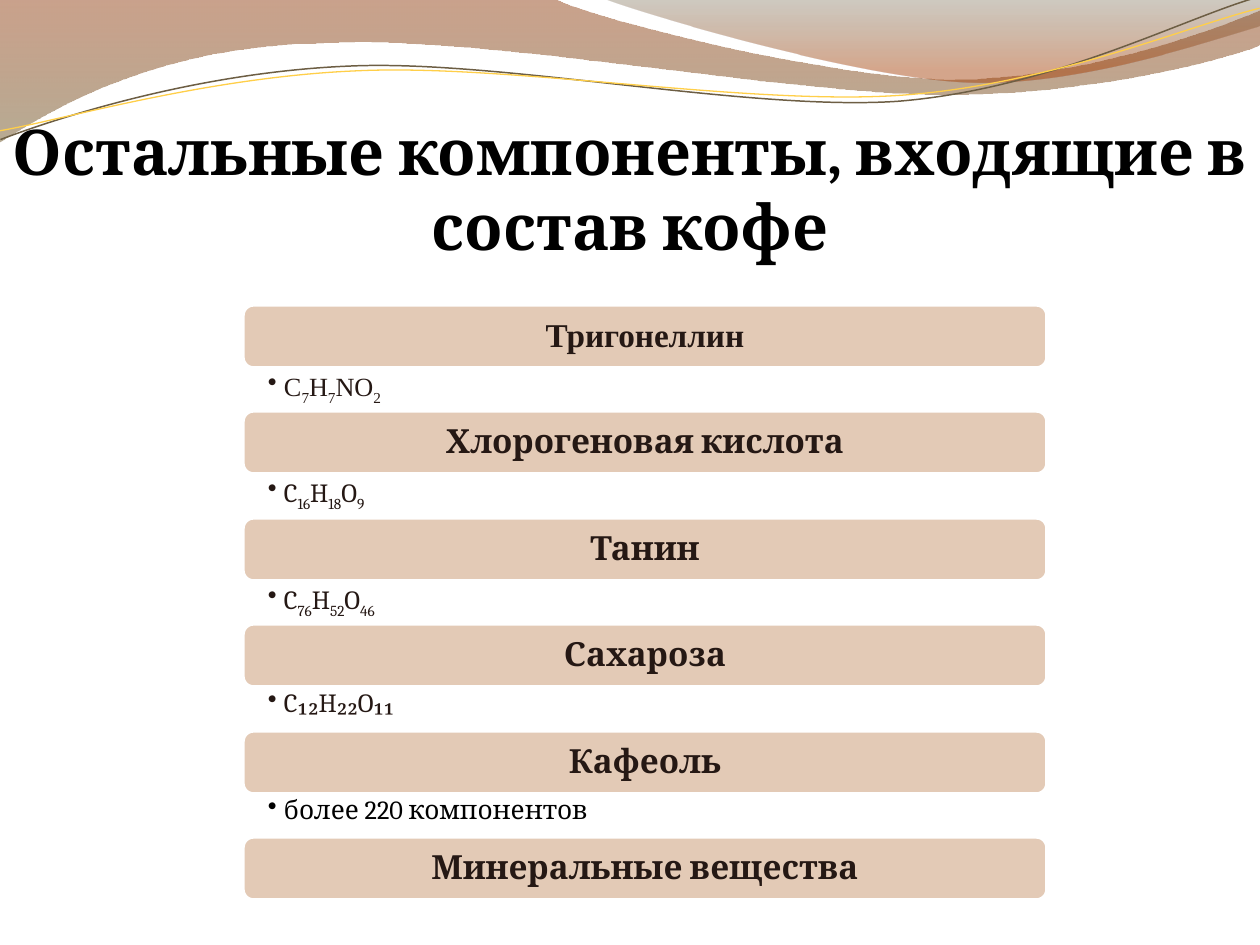
import itertools

import lxml.etree
import pptx
import pptx.dml.color
import pptx.enum.shapes
import pptx.enum.text
import pptx.oxml
import pptx.oxml.ns
import pptx.util

RGB = pptx.dml.color.RGBColor
ALIGN = pptx.enum.text.PP_ALIGN
ANCHOR = pptx.enum.text.MSO_ANCHOR
BLACK = RGB(0x00, 0x00, 0x00)
WHITE = RGB(0xFF, 0xFF, 0xFF)
DARK = RGB(0x25, 0x18, 0x14)
SAND = RGB(0xE3, 0xCA, 0xB6)
RUST = RGB(0x8A, 0x31, 0x00)
OLIVE = RGB(0x7B, 0x65, 0x3A)
UMBER = RGB(0x60, 0x51, 0x34)
COPPER = RGB(0xA4, 0x3B, 0x00)
BROWN = RGB(0x6D, 0x5E, 0x44)
GOLD = RGB(0xFF, 0xCF, 0x49)

SCALE = 914400 / 126
TILT = 357.3
SERIF = "Cambria"
TIMES = "Times New Roman"

BAND = [(0, 0), (554, -1), (600, 21, 837, 79, 955, 79),
        (1075, 79, 1207, 33, 1260, 11), (1261, 45),
        (1239, 55, 1096, 96, 940, 94), (784, 94, 481, 35, 324, 43),
        (163, 45, 58, 105, -1, 142)]
WEDGE = [(604, -1), (641, 14, 859, 78, 969, 82),
         (1079, 86, 1211, 40, 1260, 26), (1260, 0)]
WAVES = [
    ([(-2, 110), (59, 90, 200, 52, 350, 53), (499, 53, 745, 117, 896, 114),
      (1049, 109, 1184, 45, 1260, 27)], BROWN, 0.85),
    ([(-2, 101), (57, 94, 207, 57, 358, 58), (509, 58, 750, 112, 902, 108),
      (1052, 104, 1190, 52, 1262, 38)], GOLD, 0.75),
]
PARTS = [
    ("Тригонеллин", "C7H7NO2", dict(font=TIMES, sub=True)),
    ("Хлорогеновая кислота", "C16H18O9", dict(sub=True)),
    ("Танин", "C76H52O46", dict(sub=True)),
    ("Сахароза", "C₁₂H₂₂O₁₁", {}),
    ("Кафеоль", "более 220 компонентов", dict(color=BLACK)),
    ("Минеральные вещества", None, {}),
]


def px(num):
    """Turn pixels into EMU."""
    return pptx.util.Emu(round(num * SCALE))


def outline(slide, path, close):
    """Add a freeform of straight and cubic segments."""
    pts = [(px(x), px(y)) for seg in path for x, y in zip(seg[::2], seg[1::2])]
    build = slide.shapes.build_freeform(*pts[0], scale=1.0)
    build.add_line_segments(pts[1:], close=close)
    shape = build.convert_to_shape()
    shape.shadow.inherit = False
    lines = iter(shape._element.findall(".//" + pptx.oxml.ns.qn("a:lnTo")))
    for seg in path[1:]:
        group = list(itertools.islice(lines, len(seg) // 2))
        if len(group) == 3:
            curve = lxml.etree.Element(pptx.oxml.ns.qn("a:cubicBezTo"))
            group[0].addprevious(curve)
            for line in group:
                curve.append(line[0])
                line.getparent().remove(line)
    return shape


def area(slide, path, stops):
    """Add a closed outline with a see-through vertical gradient."""
    shape = outline(slide, path, True)
    shape.line.fill.background()
    marks = "".join(
        f'<a:gs pos="{pos * 1000}"><a:srgbClr val="{color}">'
        f'<a:alpha val="{alpha * 1000}"/></a:srgbClr></a:gs>'
        for pos, color, alpha in stops)
    grad = pptx.oxml.parse_xml(
        f'<a:gradFill {pptx.oxml.ns.nsdecls("a")}><a:gsLst>{marks}</a:gsLst>'
        '<a:lin ang="5400000" scaled="0"/></a:gradFill>')
    shape._element.spPr.find(pptx.oxml.ns.qn("a:custGeom")).addnext(grad)


def wave(slide, path, color, width):
    """Add a tilted open curve."""
    shape = outline(slide, path, False)
    shape.rotation = TILT
    shape.fill.background()
    shape.line.color.rgb = color
    shape.line.width = pptx.util.Pt(width)
    return shape


def put(frame, text, size=15, font=SERIF, color=DARK, bold=False, sub=False,
        align=ALIGN.LEFT, anchor=ANCHOR.TOP, space=0.9, pad=(10, 10, 10, 10),
        bullet=False):
    """Write one formatted paragraph into a text frame."""
    frame.word_wrap = True
    frame.auto_size = pptx.enum.text.MSO_AUTO_SIZE.NONE
    frame.vertical_anchor = anchor
    (frame.margin_left, frame.margin_top,
     frame.margin_right, frame.margin_bottom) = map(px, pad)
    para = frame.paragraphs[0]
    para.alignment = align
    para.line_spacing = space
    if bullet:
        props = para._p.get_or_add_pPr()
        props.set("marL", str(px(16)))
        props.set("indent", str(px(-16)))
        mark = lxml.etree.SubElement(props, pptx.oxml.ns.qn("a:buChar"))
        mark.set("char", "••")
    for low, chars in itertools.groupby(text, lambda c: sub and c.isdigit()):
        run = para.add_run()
        run.text = "".join(chars)
        run.font.size = pptx.util.Pt(size)
        run.font.name = font
        run.font.bold = bold
        run.font.color.rgb = color
        if low:
            run.font._element.set("baseline", "-25000")


def bar(shapes, top):
    """Add a rounded bar."""
    shape = shapes.add_shape(
        pptx.enum.shapes.MSO_SHAPE.ROUNDED_RECTANGLE,
        px(243), px(top), px(804), px(63))
    shape.shadow.inherit = False
    shape.fill.solid()
    shape.fill.fore_color.rgb = SAND
    shape.line.color.rgb = WHITE
    shape.line.width = pptx.util.Pt(2)


def label(shapes, top, text, font):
    """Add the centred heading of a bar."""
    box = shapes.add_textbox(px(246), px(top), px(798), px(57))
    put(box.text_frame, text, size=19, font=font, bold=True,
        align=ALIGN.CENTER, anchor=ANCHOR.MIDDLE)


def note(shapes, top, text, **form):
    """Add a bulleted line below a bar."""
    box = shapes.add_textbox(px(243), px(top), px(804), px(43))
    put(box.text_frame, text, pad=(25, 3, 19, 3), bullet=True, **form)


def head(slide, text):
    """Place the title in front of the waves."""
    title = slide.shapes.title
    title.left, title.top, title.width, title.height = map(px, (0, 106, 1260, 165))
    put(title.text_frame, text, size=36, color=BLACK, bold=True,
        align=ALIGN.CENTER, space=1.0, pad=(12, 6, 12, 6))
    slide.shapes._spTree.append(title._element)


def main():
    """Build the slide and save it."""
    deck = pptx.Presentation()
    deck.slide_width, deck.slide_height = px(1260), px(945)
    slide = deck.slides.add_slide(deck.slide_layouts[5])
    area(slide, BAND, [(0, RUST, 45), (100, OLIVE, 55)])
    area(slide, WEDGE, [(0, UMBER, 30), (80, COPPER, 45)])
    slide.shapes.add_group_shape([wave(slide, *item) for item in WAVES])
    stack = slide.shapes.add_group_shape().shapes
    for row, (name, detail, form) in enumerate(PARTS):
        top = round(305 + 106.4 * row)
        bar(stack, top)
        label(stack, top + 3, name, form.get("font", SERIF))
        if detail:
            note(stack, top + 63, detail, **form)
    head(slide, "Остальные компоненты, входящие в состав кофе")
    deck.save("out.pptx")


if __name__ == "__main__":
    main()
